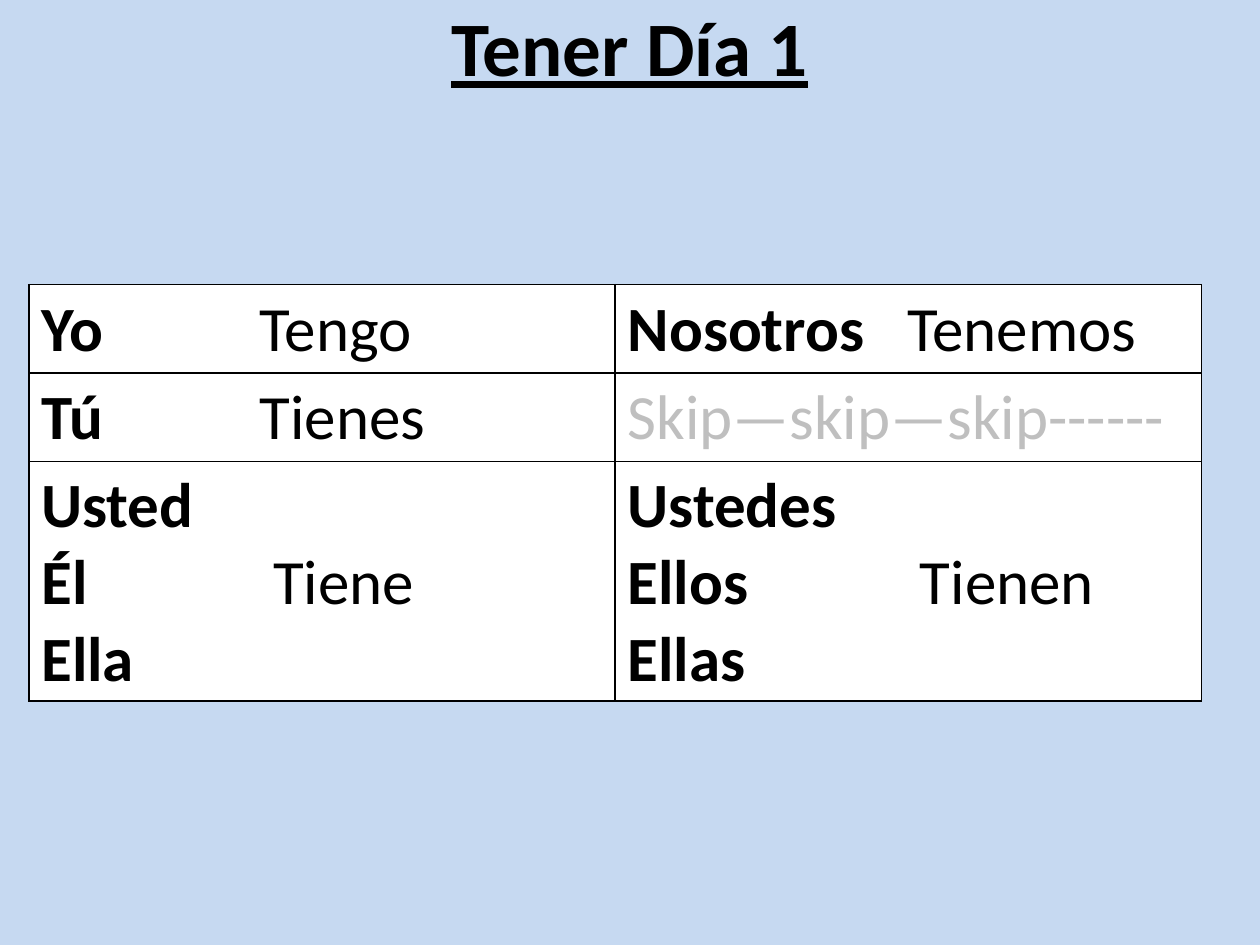
from dataclasses import dataclass

from lxml import etree
from pptx import Presentation
from pptx.dml.color import RGBColor
from pptx.enum.text import MSO_ANCHOR, PP_ALIGN
from pptx.oxml.ns import qn
from pptx.table import _Cell
from pptx.text.text import _Paragraph
from pptx.util import Cm, Pt

CENTER = PP_ALIGN.CENTER
MIDDLE = MSO_ANCHOR.MIDDLE

BLACK = RGBColor(0x00, 0x00, 0x00)
WHITE = RGBColor(0xFF, 0xFF, 0xFF)
GREY = RGBColor(0xBF, 0xBF, 0xBF)
SKY = RGBColor(0xC6, 0xD9, 0xF1)

TITLE_FORMAT = {"name": "Calibri", "size": Pt(44), "bold": True, "underline": True}
PRONOUN_FORMAT = {"name": "Calibri", "size": Pt(36), "bold": True}
VERB_FORMAT = {**PRONOUN_FORMAT, "bold": False}


@dataclass(frozen=True)
class Entry:
    """One line of a cell: a pronoun and, at a tab stop, its verb form."""
    pronoun: str = ""
    verb: str = ""
    verb_offset: float = 0
    color: RGBColor = BLACK


CONJUGATION = [
    [[Entry("Yo", "Tengo", 4.4)], [Entry("Nosotros", "Tenemos", 5.64)]],
    [[Entry("Tú", "Tienes", 4.4)], [Entry(verb="Skip—skip—skip------", color=GREY)]],
    [
        [Entry("Usted"), Entry("Él", "Tiene", 4.67), Entry("Ella")],
        [Entry("Ustedes"), Entry("Ellos", "Tienen", 5.89), Entry("Ellas")],
    ],
]
ROW_HEIGHTS = [1.78, 1.78, 4.83]
COLUMN_WIDTH = 11.82


def add_run(paragraph: _Paragraph, text: str, formats: dict, color: RGBColor = BLACK) -> None:
    run = paragraph.add_run()
    run.text = text
    for attribute, value in formats.items():
        setattr(run.font, attribute, value)
    run.font.color.rgb = color


def add_tab_stop(paragraph: _Paragraph, offset: float) -> None:
    stops = etree.SubElement(paragraph._p.get_or_add_pPr(), qn("a:tabLst"))
    etree.SubElement(stops, qn("a:tab"), pos=str(Cm(offset)), algn="l")


def write_entry(paragraph: _Paragraph, entry: Entry) -> None:
    if entry.pronoun:
        add_run(paragraph, entry.pronoun, PRONOUN_FORMAT, entry.color)
    if entry.verb_offset:
        add_tab_stop(paragraph, entry.verb_offset)
        add_run(paragraph, "\t", VERB_FORMAT)
    if entry.verb:
        add_run(paragraph, entry.verb, VERB_FORMAT, entry.color)


def style_cell(cell: _Cell) -> None:
    properties = cell._tc.get_or_add_tcPr()
    for side in ("a:lnL", "a:lnR", "a:lnT", "a:lnB"):
        border = etree.SubElement(properties, qn(side), w=str(Pt(1)))
        fill = etree.SubElement(border, qn("a:solidFill"))
        etree.SubElement(fill, qn("a:srgbClr"), val=str(BLACK))
    cell.fill.solid()
    cell.fill.fore_color.rgb = WHITE


def fill_cell(cell: _Cell, entries: list[Entry]) -> None:
    style_cell(cell)
    frame = cell.text_frame
    for index, entry in enumerate(entries):
        write_entry(frame.add_paragraph() if index else frame.paragraphs[0], entry)


def main() -> None:
    deck = Presentation()
    deck.slide_width, deck.slide_height = Cm(25.4), Cm(19.05)
    slide = deck.slides.add_slide(deck.slide_layouts[6])
    slide.background.fill.solid()
    slide.background.fill.fore_color.rgb = SKY

    # Title
    title = slide.shapes.add_textbox(Cm(0), Cm(-0.79), deck.slide_width, Cm(3.43)).text_frame
    title.word_wrap = True
    title.vertical_anchor = MIDDLE
    title.paragraphs[0].alignment = CENTER
    add_run(title.paragraphs[0], "Tener Día 1", TITLE_FORMAT)

    # Conjugation table
    columns = len(CONJUGATION[0])
    table = slide.shapes.add_table(
        len(CONJUGATION), columns, Cm(0.58), Cm(5.74),
        Cm(COLUMN_WIDTH * columns), Cm(sum(ROW_HEIGHTS)),
    ).table
    for column in table.columns:
        column.width = Cm(COLUMN_WIDTH)
    for row, height, cells in zip(table.rows, ROW_HEIGHTS, CONJUGATION):
        row.height = Cm(height)
        for cell, entries in zip(row.cells, cells):
            fill_cell(cell, entries)

    deck.save("out.pptx")


if __name__ == "__main__":
    main()
